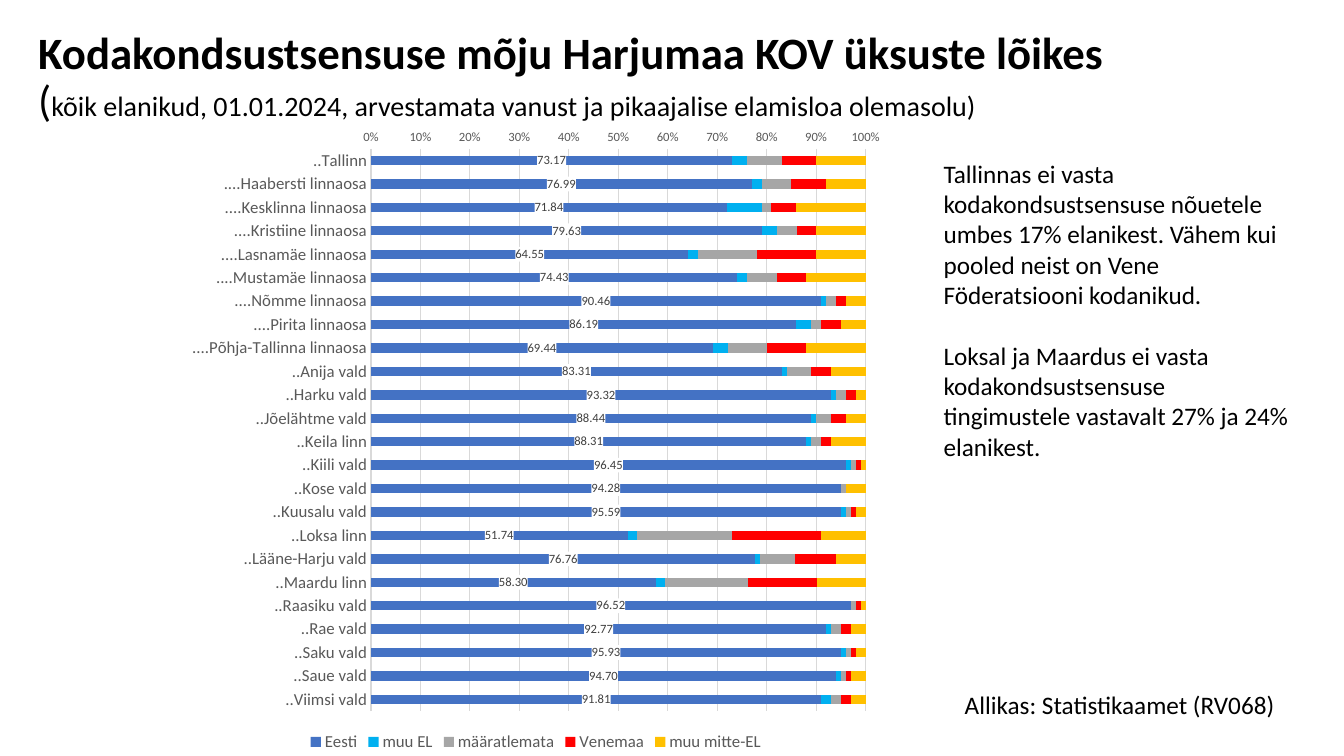
"""Build a slide on citizenship in the municipalities of Harju county."""
from lxml import etree
from pptx import Presentation
from pptx.chart.data import CategoryChartData
from pptx.dml.color import RGBColor
from pptx.enum.chart import XL_CHART_TYPE, XL_LEGEND_POSITION, XL_TICK_MARK
from pptx.enum.text import MSO_ANCHOR
from pptx.oxml import parse_xml
from pptx.oxml.ns import nsdecls, qn
from pptx.util import Inches, Pt

STACKED = XL_CHART_TYPE.BAR_STACKED_100
BOTTOM = XL_LEGEND_POSITION.BOTTOM
NO_TICK = XL_TICK_MARK.NONE
TOP, MIDDLE = MSO_ANCHOR.TOP, MSO_ANCHOR.MIDDLE

FONT = "Calibri"
BLACK, GREY, LABEL, GRID, WHITE = "000000", "595959", "404040", "D9D9D9", "FFFFFF"

TITLE = [[
    ("Kodakondsustsensuse mõju Harjumaa KOV üksuste lõikes\v", 32, True),
    ("(", 31, False),
    ("kõik elanikud, 01.01.2024, arvestamata vanust ja pikaajalise elamisloa olemasolu)", 20, False),
]]
COMMENT = [
    [("Tallinnas ei vasta kodakondsustsensuse nõuetele umbes 17% elanikest. "
      "Vähem kui pooled neist on Vene Föderatsiooni kodanikud.", 18, False)],
    [("Loksal ja Maardus ei vasta kodakondsustsensuse tingimustele vastavalt "
      "27% ja 24% elanikest.", 18, False)],
]
SOURCE = [[("Allikas: Statistikaamet (RV068)", 18, False)]]

SERIES = [("Eesti", "4472C4"), ("muu EL", "00B0F0"), ("määratlemata", "A6A6A6"),
          ("Venemaa", "FF0000"), ("muu mitte-EL", "FFC000")]
ROWS = [
    ("..Tallinn", 73.17, 3, 7, 7, 10),
    ("....Haabersti linnaosa", 76.99, 2, 6, 7, 8),
    ("....Kesklinna linnaosa", 71.84, 7, 2, 5, 14),
    ("....Kristiine linnaosa", 79.63, 3, 4, 4, 10),
    ("....Lasnamäe linnaosa", 64.55, 2, 12, 12, 10),
    ("....Mustamäe linnaosa", 74.43, 2, 6, 6, 12),
    ("....Nõmme linnaosa", 90.46, 1, 2, 2, 4),
    ("....Pirita linnaosa", 86.19, 3, 2, 4, 5),
    ("....Põhja-Tallinna linnaosa", 69.44, 3, 8, 8, 12),
    ("..Anija vald", 83.31, 1, 5, 4, 7),
    ("..Harku vald", 93.32, 1, 2, 2, 2),
    ("..Jõelähtme vald", 88.44, 1, 3, 3, 4),
    ("..Keila linn", 88.31, 1, 2, 2, 7),
    ("..Kiili vald", 96.45, 1, 1, 1, 1),
    ("..Kose vald", 94.28, 0, 1, 0, 4),
    ("..Kuusalu vald", 95.59, 1, 1, 1, 2),
    ("..Loksa linn", 51.74, 2, 19, 18, 9),
    ("..Lääne-Harju vald", 76.76, 1, 7, 8, 6),
    ("..Maardu linn", 58.30, 2, 17, 14, 10),
    ("..Raasiku vald", 96.52, 0, 1, 1, 1),
    ("..Rae vald", 92.77, 1, 2, 2, 3),
    ("..Saku vald", 95.93, 1, 1, 1, 2),
    ("..Saue vald", 94.70, 1, 1, 1, 3),
    ("..Viimsi vald", 91.81, 2, 2, 2, 3),
]
CHART_BOX = (1.76, 1.16, 7.11, 6.34)
PLOT_BOX = {"x": 0.27, "y": 0.05, "w": 0.69, "h": 0.88}


def rgb(value):
    return RGBColor.from_string(value)


def set_font(font, size, color, bold=False):
    font.name, font.size, font.bold = FONT, Pt(size), bold
    font.color.rgb = rgb(color)


def add_text(s, box, paragraphs, anchor=TOP, spacing=1.0, gap=0):
    tf = s.shapes.add_textbox(*map(Inches, box)).text_frame
    tf.word_wrap, tf.vertical_anchor = True, anchor
    for i, runs in enumerate(paragraphs):
        p = tf.add_paragraph() if i else tf.paragraphs[0]
        p.line_spacing = spacing
        p.space_before = Pt(gap if i else 0)
        for text, size, bold in runs:
            lines = text.split("\v")
            for j, line in enumerate(lines):
                if j:
                    p.add_line_break()
                if line:
                    r = p.add_run()
                    r.text = line
                    set_font(r.font, size, BLACK, bold)


def style_axis(axis, size):
    axis.major_tick_mark = axis.minor_tick_mark = NO_TICK
    set_font(axis.tick_labels.font, size, GREY)


def place_plot(chart):
    area = chart.element.find(".//" + qn("c:plotArea"))
    for old in area.findall(qn("c:layout")):
        area.remove(old)
    layout = etree.Element(qn("c:layout"))
    manual = etree.SubElement(layout, qn("c:manualLayout"))
    marks = {"layoutTarget": "inner", "xMode": "edge", "yMode": "edge", **PLOT_BOX}
    for tag, value in marks.items():
        etree.SubElement(manual, qn("c:" + tag)).set("val", str(value))
    area.insert(0, layout)


def add_chart(s):
    data = CategoryChartData(number_format="0.00")
    names, *columns = zip(*ROWS)
    data.categories = names
    for (name, _), values in zip(SERIES, columns):
        data.add_series(name, values)
    chart = s.shapes.add_chart(STACKED, *map(Inches, CHART_BOX), data).chart
    set_font(chart.font, 10, BLACK)
    chart.has_title = False
    chart.has_legend = True
    chart.legend.position = BOTTOM
    chart.legend.include_in_layout = False
    set_font(chart.legend.font, 12, GREY)

    plot = chart.plots[0]
    plot.gap_width, plot.overlap, plot.vary_by_categories = 150, 100, False
    for series, (_, color) in zip(plot.series, SERIES):
        series.format.fill.solid()
        series.format.fill.fore_color.rgb = rgb(color)

    labels = plot.series[0].data_labels
    labels.show_value = True
    labels.number_format, labels.number_format_is_linked = "0.00", False
    set_font(labels.font, 9, LABEL)
    box = parse_xml(f'<c:spPr {nsdecls("c", "a")}><a:solidFill>'
                    f'<a:srgbClr val="{WHITE}"/></a:solidFill></c:spPr>')
    chart.element.find(".//" + qn("c:dLbls")).find(qn("c:numFmt")).addnext(box)

    cat, val = chart.category_axis, chart.value_axis
    style_axis(cat, 12)
    style_axis(val, 9)
    cat.reverse_order = True
    val.has_major_gridlines = True
    val.tick_labels.number_format = "0%"
    val.tick_labels.number_format_is_linked = False
    val.format.line.fill.background()
    for line in (cat.format.line, val.major_gridlines.format.line):
        line.color.rgb, line.width = rgb(GRID), Pt(0.75)
    place_plot(chart)


def main():
    prs = Presentation()
    prs.slide_width, prs.slide_height = Inches(13.33), Inches(7.5)
    s = prs.slides.add_slide(prs.slide_layouts[6])
    add_text(s, (0.28, 0.4, 12.75, 0.76), TITLE, MIDDLE, 0.9)
    add_chart(s)
    add_text(s, (9.26, 1.52, 3.65, 4.04), COMMENT, gap=22)
    add_text(s, (9.47, 6.79, 3.56, 0.4), SOURCE)
    prs.save("out.pptx")


if __name__ == "__main__":
    main()
